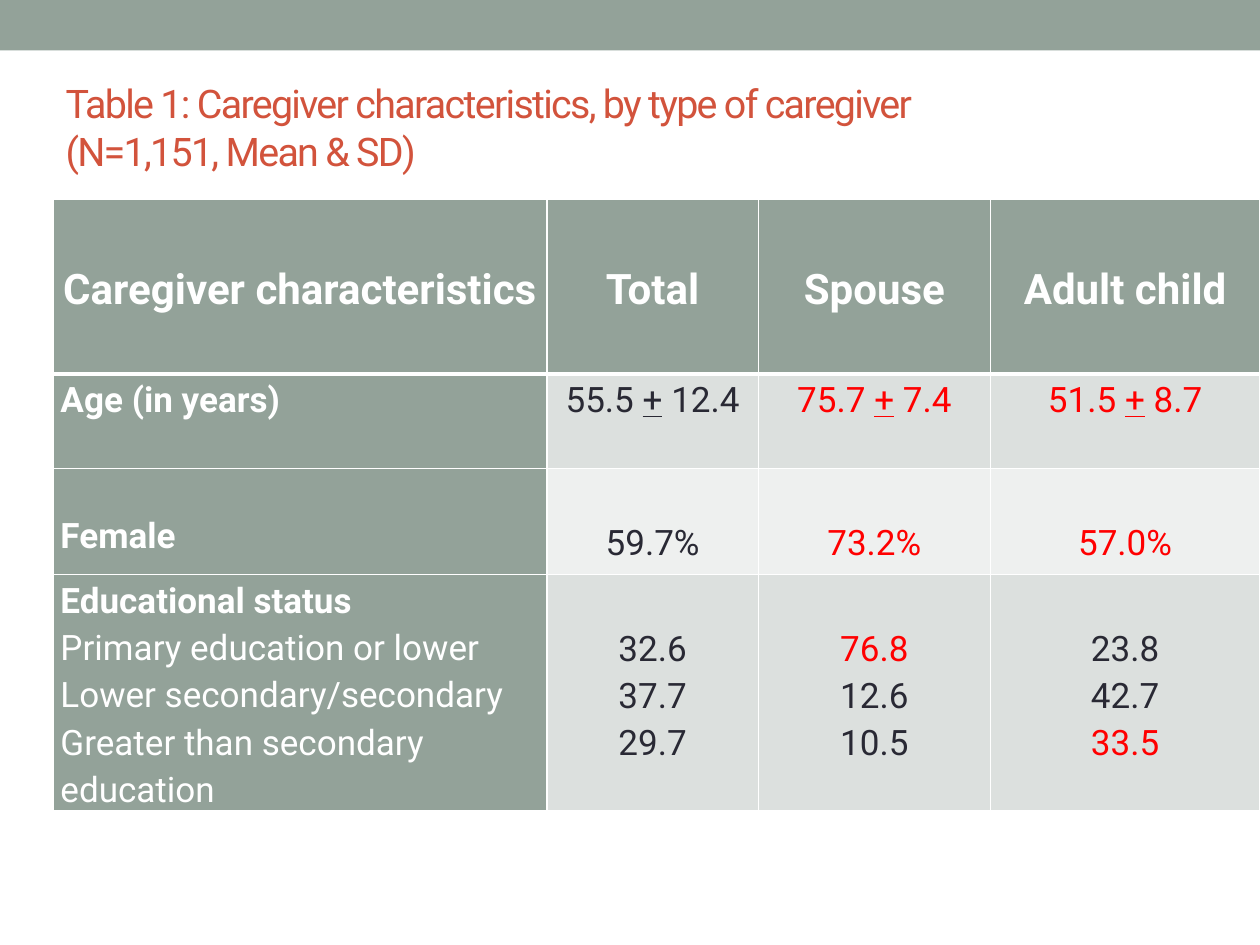
from lxml import etree
from pptx import Presentation
from pptx.dml.color import RGBColor
from pptx.enum import shapes, text
from pptx.oxml import ns
from pptx.util import Inches, Pt

FONT = "Roboto"
SAGE = RGBColor(0x93, 0xA2, 0x99)
BRICK = RGBColor(0xD2, 0x53, 0x3C)
WHITE = RGBColor(0xFF, 0xFF, 0xFF)
INK = RGBColor(0x29, 0x29, 0x34)
RED = RGBColor(0xFF, 0x00, 0x00)
BAND_DARK = RGBColor(0xDC, 0xE0, 0xDE)
BAND_LIGHT = RGBColor(0xEE, 0xF0, 0xEF)

TITLE = ["Table 1: Caregiver characteristics, by type of caregiver",
         "(N=1,151, Mean & SD)"]
COLUMN_WIDTHS = [3.92, 1.68, 1.84, 2.14]
HEADINGS = ["Caregiver characteristics", "Total", "Spouse", "Adult child"]
# height, band, space above label, space above values, label lines, value columns
ROWS = [
    (0.75, BAND_DARK, 0, 0, ["Age (in years)"],
     [["55.5 + 12.4"], ["75.7 + 7.4"], ["51.5 + 8.7"]]),
    (0.84, BAND_LIGHT, 0.33, 0.38, ["Female"],
     [["59.7%"], ["73.2%"], ["57.0%"]]),
    (1.87, BAND_DARK, 0, 0.38,
     ["Educational status", "Primary education or lower",
      "Lower secondary/secondary", "Greater than secondary education"],
     [["32.6", "37.7", "29.7"], ["76.8", "12.6", "10.5"], ["23.8", "42.7", "33.5"]]),
]
HIGHLIGHTED = {"75.7 + 7.4", "51.5 + 8.7", "73.2%", "57.0%", "76.8", "33.5"}


def style(span, size, color, bold=False):
    span.font.name = FONT
    span.font.size = Pt(size)
    span.font.color.rgb = color
    span.font.bold = bold


def set_borders(cell, bottom=1):
    properties = cell._tc.get_or_add_tcPr()
    widths = {"lnL": 1, "lnR": 1, "lnT": 1, "lnB": bottom}
    for position, (tag, width) in enumerate(widths.items()):
        line = etree.Element(ns.qn("a:" + tag), w=str(Pt(width)))
        fill = etree.SubElement(line, ns.qn("a:solidFill"))
        etree.SubElement(fill, ns.qn("a:srgbClr"), val=str(WHITE))
        properties.insert(position, line)


def prepare_cell(cell, fill, space_above=0, bottom=1):
    cell.fill.solid()
    cell.fill.fore_color.rgb = fill
    cell.margin_left = cell.margin_right = Inches(0.06)
    cell.margin_top, cell.margin_bottom = Inches(space_above), 0
    set_borders(cell, bottom)


def write_lines(cell, lines, align):
    """Fill the cell, one paragraph a line, and give the paragraphs back."""
    cell.text_frame.text = "\n".join(lines)
    for para in cell.text_frame.paragraphs:
        para.alignment = align
        para.line_spacing = 1.15
    return cell.text_frame.paragraphs


def write_value(para):
    """Style a value, underlining the plus sign of a mean and deviation."""
    value = para.text
    color = RED if value in HIGHLIGHTED else INK
    mean, sign, deviation = value.partition("+")
    para.runs[0].text = mean
    for piece in filter(None, (sign, deviation)):
        para.add_run().text = piece
    for span in para.runs:
        style(span, 20, color)
        if span.text == "+":
            span.font.underline = True


def add_top_bar(page, left, top, width, height):
    bar = page.shapes.add_shape(shapes.MSO_SHAPE.RECTANGLE, left, top, width, height)
    bar.shadow.inherit = False
    bar.fill.solid()
    bar.fill.fore_color.rgb = SAGE
    bar.line.fill.background()


def place_title(page, left, top, width, height):
    title = page.shapes.title
    title.left, title.top, title.width, title.height = left, top, width, height
    frame = title.text_frame
    frame.text = "\n".join(TITLE)
    frame.auto_size = text.MSO_AUTO_SIZE.NONE
    frame.vertical_anchor = text.MSO_ANCHOR.MIDDLE
    for para in frame.paragraphs:
        para.alignment = text.PP_ALIGN.LEFT
        for span in para.runs:
            style(span, 22.5, BRICK)
            span._r.get_or_add_rPr().set("spc", "-100")


def add_caregiver_table(page, left, top, width, height):
    table = page.shapes.add_table(len(ROWS) + 1, len(HEADINGS),
                                  left, top, width, height).table
    for column, column_width in zip(table.columns, COLUMN_WIDTHS):
        column.width = Inches(column_width)

    body_height = sum(Inches(row[0]) for row in ROWS)
    table.rows[0].height = height - body_height
    for column, heading in enumerate(HEADINGS):
        cell = table.cell(0, column)
        prepare_cell(cell, SAGE, bottom=3)
        cell.vertical_anchor = text.MSO_ANCHOR.MIDDLE
        for para in write_lines(cell, [heading], text.PP_ALIGN.CENTER):
            style(para.runs[0], 24, WHITE, bold=True)

    for index, row in enumerate(ROWS, start=1):
        row_height, band, label_space, value_space, labels, values = row
        table.rows[index].height = Inches(row_height)
        label_cell = table.cell(index, 0)
        prepare_cell(label_cell, SAGE, label_space)
        label_paras = write_lines(label_cell, labels, text.PP_ALIGN.LEFT)
        for number, para in enumerate(label_paras):
            style(para.runs[0], 20, WHITE, bold=number == 0)
        for column, lines in enumerate(values, start=1):
            cell = table.cell(index, column)
            prepare_cell(cell, band, value_space)
            for para in write_lines(cell, lines, text.PP_ALIGN.CENTER):
                write_value(para)


def main():
    deck = Presentation()
    deck.slide_width, deck.slide_height = Inches(10), Inches(7.5)
    page = deck.slides.add_slide(deck.slide_layouts[5])
    add_top_bar(page, 0, 0, deck.slide_width, Inches(0.4))
    place_title(page, Inches(0.42), Inches(0.67), Inches(9.58), Inches(0.67))
    add_caregiver_table(page, Inches(0.42), Inches(1.58), Inches(9.58), Inches(4.85))
    deck.save("out.pptx")


if __name__ == "__main__":
    main()
